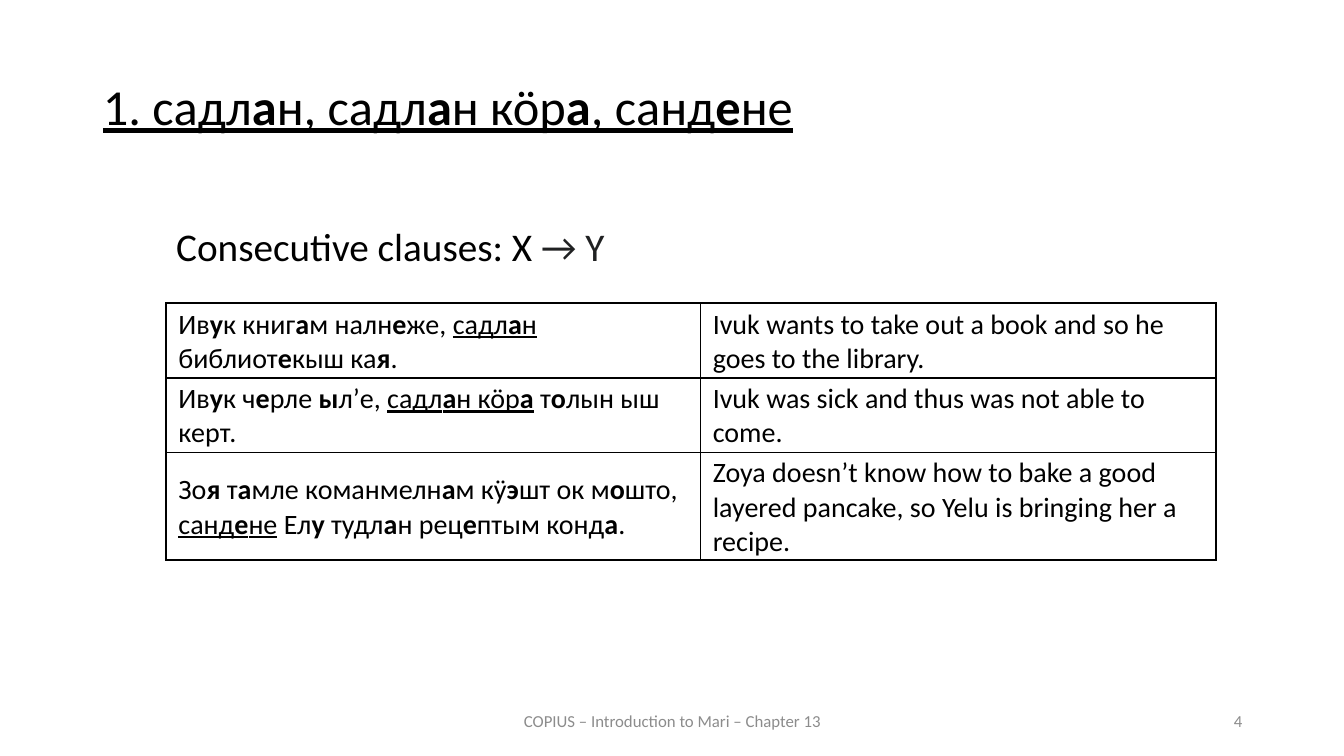
from lxml import etree
from pptx import Presentation
from pptx import util as u
from pptx.dml.color import RGBColor
from pptx.enum import text
from pptx.oxml.ns import qn

HUES = {"ink": "000000", "soft": "202122", "grey": "8C8C8C"}
LEFT, MID, RIGHT = text.PP_ALIGN.LEFT, text.PP_ALIGN.CENTER, text.PP_ALIGN.RIGHT


def write(para, marked, size, hue="ink"):
    """Add runs to a paragraph: * switches bold, _ switches underline."""
    state = {"bold": False, "underline": False}
    keys = {"*": "bold", "_": "underline"}
    for part in marked.replace("*", "\n*\n").replace("_", "\n_\n").split("\n"):
        if part in keys:
            state[keys[part]] = not state[keys[part]]
        elif part:
            run = para.add_run()
            run.text = part
            look = {"name": "Calibri", "size": u.Pt(size), **state}
            for key, value in look.items():
                setattr(run.font, key, value)
            run.font.color.rgb = RGBColor.from_string(HUES[hue])


def place(shape, box, anchor, **style):
    """Set a shape's box in inches, its frame and its paragraph format."""
    for key, value in zip(("left", "top", "width", "height"), box):
        setattr(shape, key, u.Inches(value))
    frame = shape.text_frame
    frame.word_wrap = True
    frame.auto_size = text.MSO_AUTO_SIZE.NONE
    frame.vertical_anchor = anchor
    for key, value in style.items():
        setattr(frame.paragraphs[0], key, value)
    return frame.paragraphs[0]


deck = Presentation()
deck.slide_width, deck.slide_height = u.Inches(13.33), u.Inches(7.5)
slide = deck.slides.add_slide(deck.slide_layouts[5])
TOP, CENTRE = text.MSO_ANCHOR.TOP, text.MSO_ANCHOR.MIDDLE

# Title
head = place(slide.shapes.title, (0.92, 0.76, 11.5, 0.83), TOP,
             alignment=text.PP_ALIGN.JUSTIFY, line_spacing=0.9,
             space_before=u.Pt(12))
write(head, "_1. садл*а*н, садл*а*н кӧр*а*, санд*е*не_", 36)

# Lead line
lead = place(slide.shapes.add_textbox(0, 0, 0, 0), (1.65, 2.21, 10.76, 0.7),
             TOP, alignment=LEFT, line_spacing=0.9, space_before=u.Pt(10))
write(lead, "Consecutive clauses: X ", 28)
write(lead, "→ Y", 28, "soft")

# Example sentences with translations
ROWS = [
    ("Ив*у*к книг*а*м налн*е*же, _садл*а*н_ библиот*е*кыш ка*я*.",
     "Ivuk wants to take out a book and so he goes to the library."),
    ("Ив*у*к ч*е*рле *ы*л’е, _садл*а*н кӧр*а*_ т*о*лын ыш керт.",
     "Ivuk was sick and thus was not able to come."),
    ("Зо*я* т*а*мле команмелн*а*м кӱ*э*шт ок м*о*што, "
     "_санд*е*не_ Ел*у* тудл*а*н рец*е*птым конд*а*.",
     "Zoya doesn’t know how to bake a good layered pancake, "
     "so Yelu is bringing her a recipe."),
]
WIDE, HIGH = (5.3, 5.11), (0.74, 0.74, 1.07)
box = [u.Inches(n) for n in (1.65, 3.01, sum(WIDE), sum(HIGH))]
grid = slide.shapes.add_table(len(ROWS), len(WIDE), *box).table
grid.first_row = grid.horz_banding = False
for col, width in zip(grid.columns, WIDE):
    col.width = u.Inches(width)

INSET = {"margin_left": 0.12, "margin_top": 0.02,
         "margin_right": 0.12, "margin_bottom": 0}
for r, (row, height) in enumerate(zip(grid.rows, HIGH)):
    row.height = u.Inches(height)
    for c, cell in enumerate(row.cells):
        for key, value in INSET.items():
            setattr(cell, key, u.Inches(value))
        cell.vertical_anchor = CENTRE
        write(cell.text_frame.paragraphs[0], ROWS[r][c], 20)
        # Borders: thicker along the outer edge
        outer = {"L": c == 0, "R": c == len(WIDE) - 1,
                 "T": r == 0, "B": r == len(ROWS) - 1}
        props = cell._tc.get_or_add_tcPr()
        for side, edge in outer.items():
            line = etree.SubElement(props, qn(f"a:ln{side}"),
                                    w=str(u.Pt(1.5 if edge else 1)))
            fill = etree.SubElement(line, qn("a:solidFill"))
            etree.SubElement(fill, qn("a:srgbClr"), val=HUES["ink"])
        cell.fill.background()

# Footer and slide number
FOOT = [("COPIUS – Introduction to Mari – Chapter 13", 4.42, 4.5, MID),
        ("4", 9.42, 3, RIGHT)]
for words, left, width, align in FOOT:
    note = place(slide.shapes.add_textbox(0, 0, 0, 0),
                 (left, 6.95, width, 0.4), CENTRE, alignment=align)
    write(note, words, 12, "grey")

deck.save("out.pptx")
